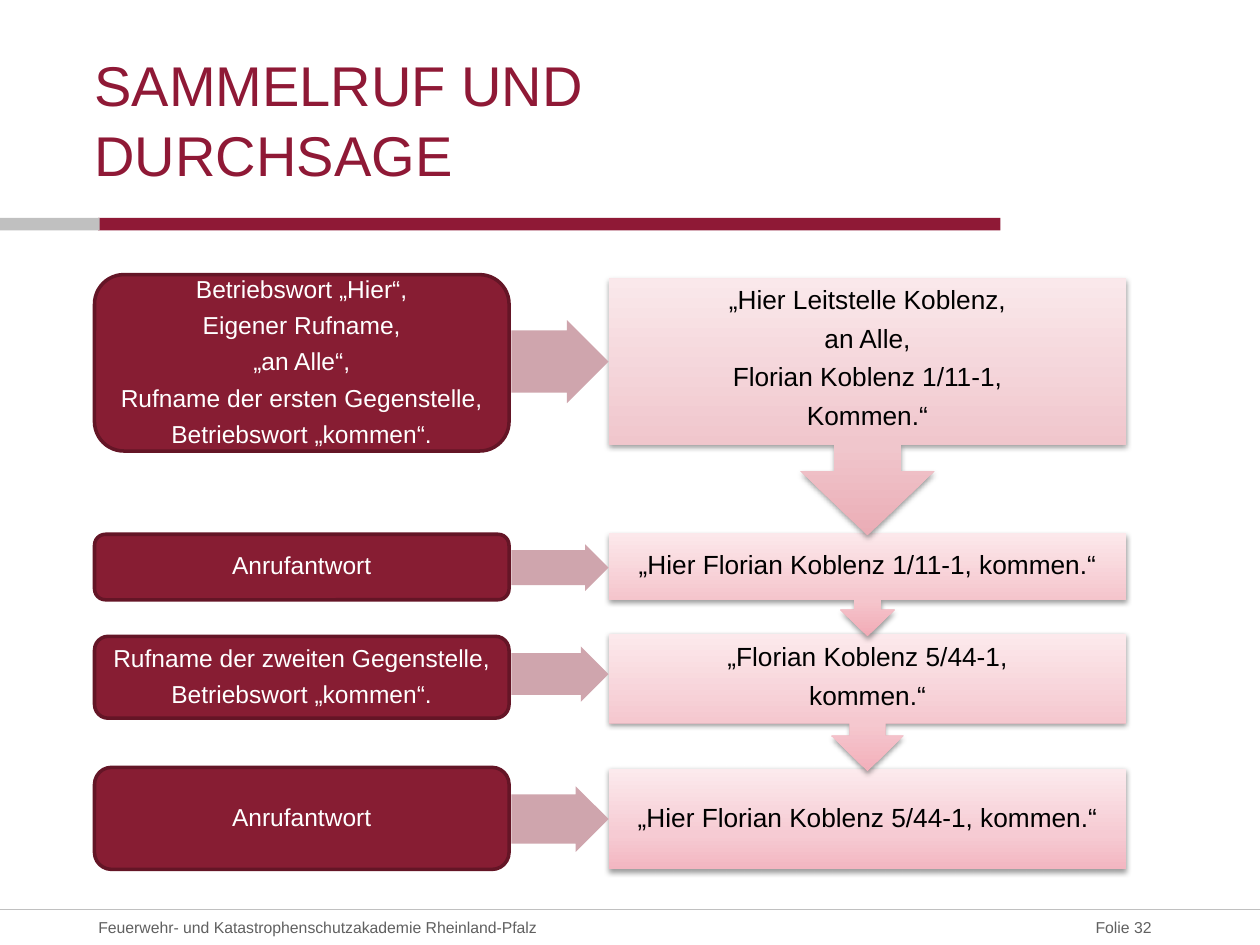
from copy import deepcopy
from lxml import etree
from pptx import Presentation, util as u
from pptx.dml.color import RGBColor
from pptx.enum import shapes, text
from pptx.oxml import ns, parse_xml

prs = Presentation()
prs.slide_width, prs.slide_height = u.Inches(10), u.Inches(7.5)
slide = prs.slides.add_slide(prs.slide_layouts[6])
cell = prs.slide_width // 1000
MIDDLE = text.MSO_ANCHOR.MIDDLE
LEFT, CENTER, RIGHT = text.PP_ALIGN.LEFT, text.PP_ALIGN.CENTER, text.PP_ALIGN.RIGHT
ACCENT, DARK, EDGE, ARROW = "8F1936", "871D33", "641526", "CFA5AD"
SILVER, GREY = "C0C0C0", "606060"


def rgb(color):
    return RGBColor.from_string(color)


def write(s, lines, size, color, align=CENTER, anchor=MIDDLE, margins=(0, 0, 0, 0), spacing=0.9):
    tf = s.text_frame
    tf.word_wrap = True
    tf.vertical_anchor = anchor
    tf.margin_left, tf.margin_top, tf.margin_right, tf.margin_bottom = [m * cell for m in margins]
    tf.text = "\n".join(lines)
    for p in tf.paragraphs:
        p.alignment = align
        p.line_spacing = spacing
        p.space_after = u.Pt(0.4 * size if align == CENTER else 0)
        p.font.name, p.font.size = "Arial", u.Pt(size)
        p.font.color.rgb = rgb(color)


for x, width, color in [(78, 716, ACCENT), (0, 79, SILVER)]:
    s = slide.shapes.add_shape(shapes.MSO_SHAPE.RECTANGLE, x * cell, 173 * cell, width * cell, 10 * cell)
    s.shadow.inherit = False
    s.fill.solid()
    s.fill.fore_color.rgb = rgb(color)
    s.line.fill.background()

s = slide.shapes.add_connector(shapes.MSO_CONNECTOR.STRAIGHT, 0, 722 * cell, 1000 * cell, 722 * cell)
s.line.color.rgb = rgb(SILVER)
s.line.width = u.Pt(0.75)
etree.SubElement(s._element.spPr, ns.qn("a:effectLst"))

for x, width, line, align, margin in [
    (794, 127, "Folie 32", RIGHT, 7),
    (78, 551, "Feuerwehr- und Katastrophenschutzakademie Rheinland-Pfalz", LEFT, 0),
]:
    s = slide.shapes.add_textbox(x * cell, 722 * cell, width * cell, 28 * cell)
    write(s, [line], 9, GREY, align, margins=(0, 0, margin, 0), spacing=1)

s = slide.shapes.add_textbox(75 * cell, 48 * cell, 639 * cell, 101 * cell)
write(s, ["SAMMELRUF UND DURCHSAGE"], 32, ACCENT, LEFT, text.MSO_ANCHOR.BOTTOM, spacing=1.04)

shadow = f"""<a:effectLst {ns.nsdecls("a")}>
<a:outerShdw blurRad="40000" dist="20000" dir="5400000" rotWithShape="0">
<a:srgbClr val="000000"><a:alpha val="38000"/></a:srgbClr></a:outerShdw></a:effectLst>"""

x0, x1 = 483, 894
mid = (x0 + x1) / 2
steps = [
    (609, 81, 624, 52, ["Anrufantwort"],
     610, 690, None, 12, ["F3B6C1", "F6CBD3", "FCEAED"],
     ["„Hier Florian Koblenz 5/44-1, kommen.“"]),
    (505, 65, 513, 44, ["Rufname der zweiten Gegenstelle,", "Betriebswort „kommen“."],
     503, 574, (584, 612, 14, 28.5), 52, ["F3B0BB", "F5C8CF", "FCE9EC"],
     ["„Florian Koblenz 5/44-1,", "kommen.“"]),
    (424, 52, 432, 37, ["Anrufantwort"],
     423, 476, (484, 505, 10.5, 21.5), 42, ["F2ABB6", "F5C5CC", "FCE8EB"],
     ["„Hier Florian Koblenz 1/11-1, kommen.“"]),
    (218, 140, 254, 66,
     ["Betriebswort „Hier“,", "Eigener Rufname,", "„an Alle“,",
      "Rufname der ersten Gegenstelle,", "Betriebswort „kommen“."],
     221, 353, (374, 425, 26.5, 53), 88, ["EBADB6", "F0C6CC", "FAE8EB"],
     ["„Hier Leitstelle Koblenz,", "an Alle,", "Florian Koblenz 1/11-1,", "Kommen.“"]),
]

for box_y, box_h, arrow_y, arrow_h, rule, top, bottom, head, inset, colors, speech in steps:
    points = [(x1, top), (x1, bottom)]
    if head:
        neck, tip, stem, wing = head
        points += [(mid + stem, bottom), (mid + stem, neck), (mid + wing, neck), (mid, tip),
                   (mid - wing, neck), (mid - stem, neck), (mid - stem, bottom)]
    points.append((x0, bottom))
    builder = slide.shapes.build_freeform(x0 * cell, top * cell)
    builder.add_line_segments([(x * cell, y * cell) for x, y in points], close=True)
    s = builder.convert_to_shape()
    s.line.fill.background()
    s.fill.gradient()
    s.fill.gradient_angle = 90
    stops = s._element.spPr.find(".//" + ns.qn("a:gsLst"))
    stops.append(deepcopy(stops[0]))
    for stop, color, position in zip(s.fill.gradient_stops, colors, (0, 0.35, 1)):
        stop.color.rgb = rgb(color)
        stop.position = position
    s._element.spPr.append(parse_xml(shadow))
    write(s, speech, 15, "000000", margins=(12, 12, 12, inset))

    s = slide.shapes.add_shape(shapes.MSO_SHAPE.RIGHT_ARROW, 406 * cell, arrow_y * cell, 77 * cell, arrow_h * cell)
    s.adjustments[0], s.adjustments[1] = 0.75, 0.5
    s.shadow.inherit = False
    s.fill.solid()
    s.fill.fore_color.rgb = rgb(ARROW)
    s.line.fill.background()

    s = slide.shapes.add_shape(shapes.MSO_SHAPE.ROUNDED_RECTANGLE, 75 * cell, box_y * cell, 329 * cell, box_h * cell)
    s.shadow.inherit = False
    s.fill.solid()
    s.fill.fore_color.rgb = rgb(DARK)
    s.line.color.rgb = rgb(EDGE)
    s.line.width = u.Pt(2)
    write(s, rule, 14, "FFFFFF")

prs.save("out.pptx")
